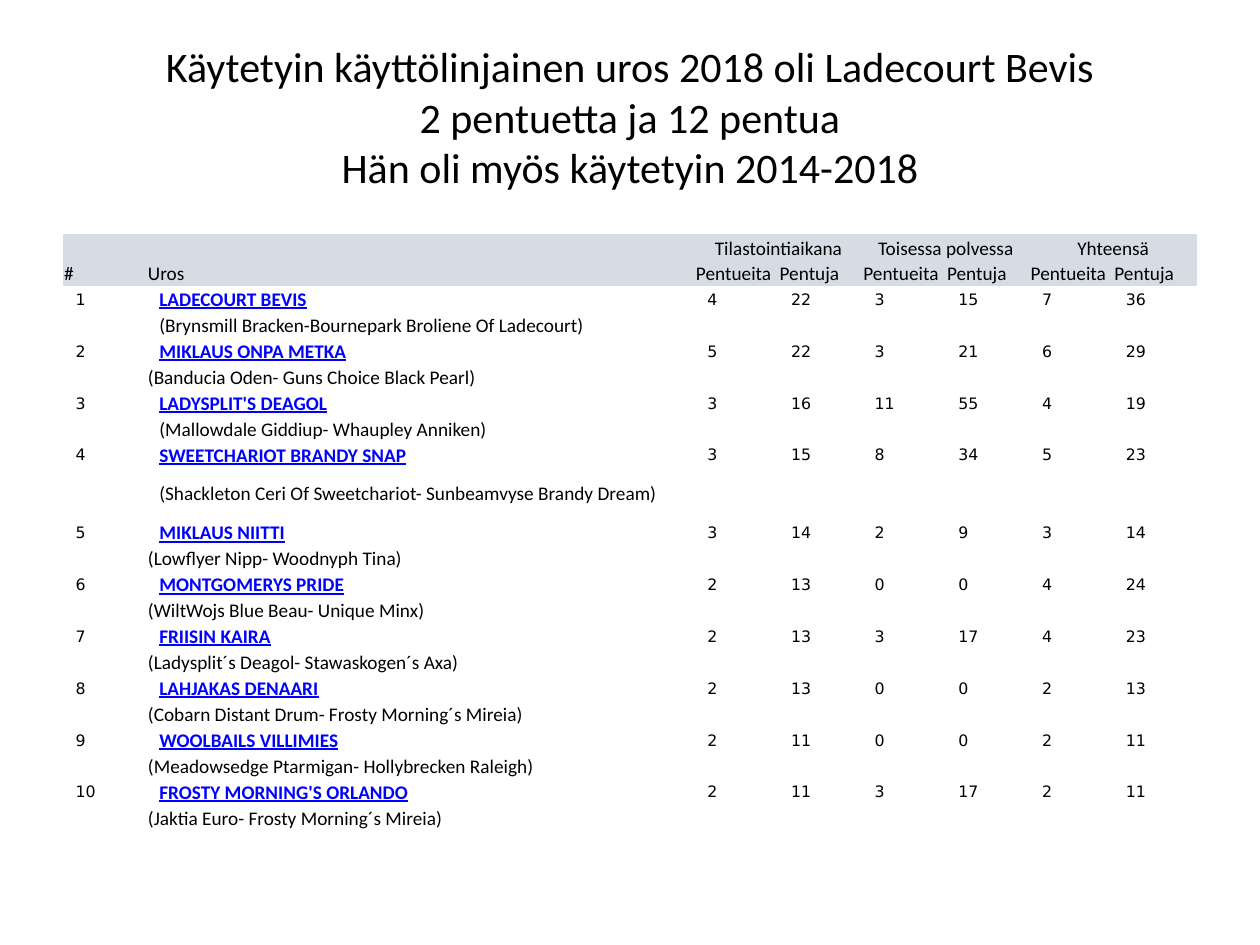
from lxml.etree import SubElement
from pptx import Presentation
from pptx.dml.color import RGBColor
from pptx.enum.text import MSO_ANCHOR, MSO_AUTO_SIZE, PP_ALIGN
from pptx.oxml.ns import qn
from pptx.util import Inches, Pt

BLACK = RGBColor(0x00, 0x00, 0x00)
WHITE = RGBColor(0xFF, 0xFF, 0xFF)
LINK_BLUE = RGBColor(0x00, 0x00, 0xFF)
HEADER_GREY = RGBColor(0xD6, 0xDC, 0xE4)

NO_GRID_STYLE = "{2D5ABB26-0587-4C30-8999-92F81FD0307C}"
TITLE = (
    "Käytetyin käyttölinjainen uros 2018 oli Ladecourt Bevis\v"
    "2 pentuetta ja 12 pentua\v"
    "Hän oli myös käytetyin 2014-2018"
)
GROUPS = ["Tilastointiaikana", "Toisessa polvessa", "Yhteensä"]
HEADINGS = ["#", "Uros"] + ["Pentueita", "Pentuja"] * len(GROUPS)
TABLE_WIDTH = 9
NAME_WIDTH = 4.35
INDENTED_RANKS = {1, 3, 4}
TALL_RANK = 4
TABLE_HEIGHT = 4.74
TALL_HEIGHT = 0.41

SIRES = [
    ("LADECOURT BEVIS", "(Brynsmill Bracken-Bournepark Broliene Of Ladecourt)", (4, 22, 3, 15, 7, 36)),
    ("MIKLAUS ONPA METKA", "(Banducia Oden- Guns Choice Black Pearl)", (5, 22, 3, 21, 6, 29)),
    ("LADYSPLIT'S DEAGOL", "(Mallowdale Giddiup- Whaupley Anniken)", (3, 16, 11, 55, 4, 19)),
    ("SWEETCHARIOT BRANDY SNAP", "(Shackleton Ceri Of Sweetchariot- Sunbeamvyse Brandy Dream)", (3, 15, 8, 34, 5, 23)),
    ("MIKLAUS NIITTI", "(Lowflyer Nipp- Woodnyph Tina)", (3, 14, 2, 9, 3, 14)),
    ("MONTGOMERYS PRIDE", "(WiltWojs Blue Beau- Unique Minx)", (2, 13, 0, 0, 4, 24)),
    ("FRIISIN KAIRA", "(Ladysplit´s Deagol- Stawaskogen´s Axa)", (2, 13, 3, 17, 4, 23)),
    ("LAHJAKAS DENAARI", "(Cobarn Distant Drum- Frosty Morning´s Mireia)", (2, 13, 0, 0, 2, 13)),
    ("WOOLBAILS VILLIMIES", "(Meadowsedge Ptarmigan- Hollybrecken Raleigh)", (2, 11, 0, 0, 2, 11)),
    ("FROSTY MORNING'S ORLANDO", "(Jaktia Euro- Frosty Morning´s Mireia)", (2, 11, 3, 17, 2, 11)),
]


class SlideBuilder:
    """Holds the style and the current slide and adds each kind of element."""

    text_font = "Calibri"
    number_font = "DejaVu Sans"

    def __init__(self, slide):
        self.slide = slide

    def style(self, paragraph, size, name=None, color=BLACK, emphasized=False):
        font = paragraph.font
        font.name = name or self.text_font
        font.size = Pt(size)
        font.color.rgb = color
        font.bold = font.underline = emphasized

    def title(self, text, left, top, width, height):
        title = self.slide.shapes.title
        title.left, title.top = Inches(left), Inches(top)
        title.width, title.height = Inches(width), Inches(height)
        frame = title.text_frame
        frame.text = text
        frame.auto_size = MSO_AUTO_SIZE.NONE
        frame.vertical_anchor = MSO_ANCHOR.MIDDLE
        paragraph = frame.paragraphs[0]
        paragraph.alignment = PP_ALIGN.CENTER
        self.style(paragraph, 24)

    def table(self, left, top, column_widths, row_heights):
        frame = self.slide.shapes.add_table(
            len(row_heights), len(column_widths), Inches(left), Inches(top),
            Inches(sum(column_widths)), Inches(sum(row_heights)))
        table = frame.table
        table.first_row = table.horz_banding = False
        table._tbl.tblPr.find(qn("a:tableStyleId")).text = NO_GRID_STYLE
        for column, width in zip(table.columns, column_widths):
            column.width = Inches(width)
        for row, height in zip(table.rows, row_heights):
            row.height = Inches(height)
        return table

    def cell(self, cell, text="", fill=None, inset=0.01, size=11,
             anchor=MSO_ANCHOR.MIDDLE, alignment=PP_ALIGN.LEFT, **font):
        if fill is None:
            cell.fill.background()
        else:
            cell.fill.solid()
            cell.fill.fore_color.rgb = fill
        cell.margin_left = Inches(inset)
        cell.margin_top = cell.margin_right = Inches(0.01)
        cell.margin_bottom = 0
        cell.vertical_anchor = anchor
        cell.text_frame.text = text
        paragraph = cell.text_frame.paragraphs[0]
        paragraph.alignment = alignment
        self.style(paragraph, size, **font)
        if not text:
            SubElement(paragraph._p, qn("a:endParaRPr"), sz=str(size * 100))

    def header(self, table):
        group_row = ["", ""]
        for group in GROUPS:
            group_row += [group, ""]
        for row, texts in enumerate([group_row, HEADINGS]):
            for column, text in enumerate(texts):
                self.cell(table.cell(row, column), text, HEADER_GREY, anchor=MSO_ANCHOR.BOTTOM,
                          alignment=PP_ALIGN.LEFT if row else PP_ALIGN.CENTER)
        for column in range(2, len(HEADINGS), 2):
            table.cell(0, column).merge(table.cell(0, column + 1))

    def sire(self, table, rank, name, parents, counts):
        row = 2 * rank
        for column, value in enumerate([rank, name, *counts]):
            if column == 1:
                style = {"color": LINK_BLUE, "emphasized": True}
            else:
                style = {"name": self.number_font, "size": 9}
            self.cell(table.cell(row, column), str(value), WHITE, inset=0.1, **style)
        indented = rank in INDENTED_RANKS
        for column in range(len(HEADINGS)):
            self.cell(table.cell(row + 1, column), parents if column == 1 else "",
                      WHITE if indented else None, inset=0.1 if indented else 0.01)


def main():
    presentation = Presentation()
    presentation.slide_width, presentation.slide_height = Inches(10), Inches(7.5)
    builder = SlideBuilder(presentation.slides.add_slide(presentation.slide_layouts[5]))
    builder.title(TITLE, 0.5, 0.3, 9, 1.25)

    column_widths = [(TABLE_WIDTH - NAME_WIDTH) / (len(HEADINGS) - 1)] * len(HEADINGS)
    column_widths[1] = NAME_WIDTH
    row_count = 2 + 2 * len(SIRES)
    row_heights = [(TABLE_HEIGHT - TALL_HEIGHT) / (row_count - 1)] * row_count
    row_heights[2 * TALL_RANK + 1] = TALL_HEIGHT
    table = builder.table(0.5, 1.86, column_widths, row_heights)
    builder.header(table)
    for rank, sire in enumerate(SIRES, start=1):
        builder.sire(table, rank, *sire)
    presentation.save("out.pptx")


if __name__ == "__main__":
    main()
